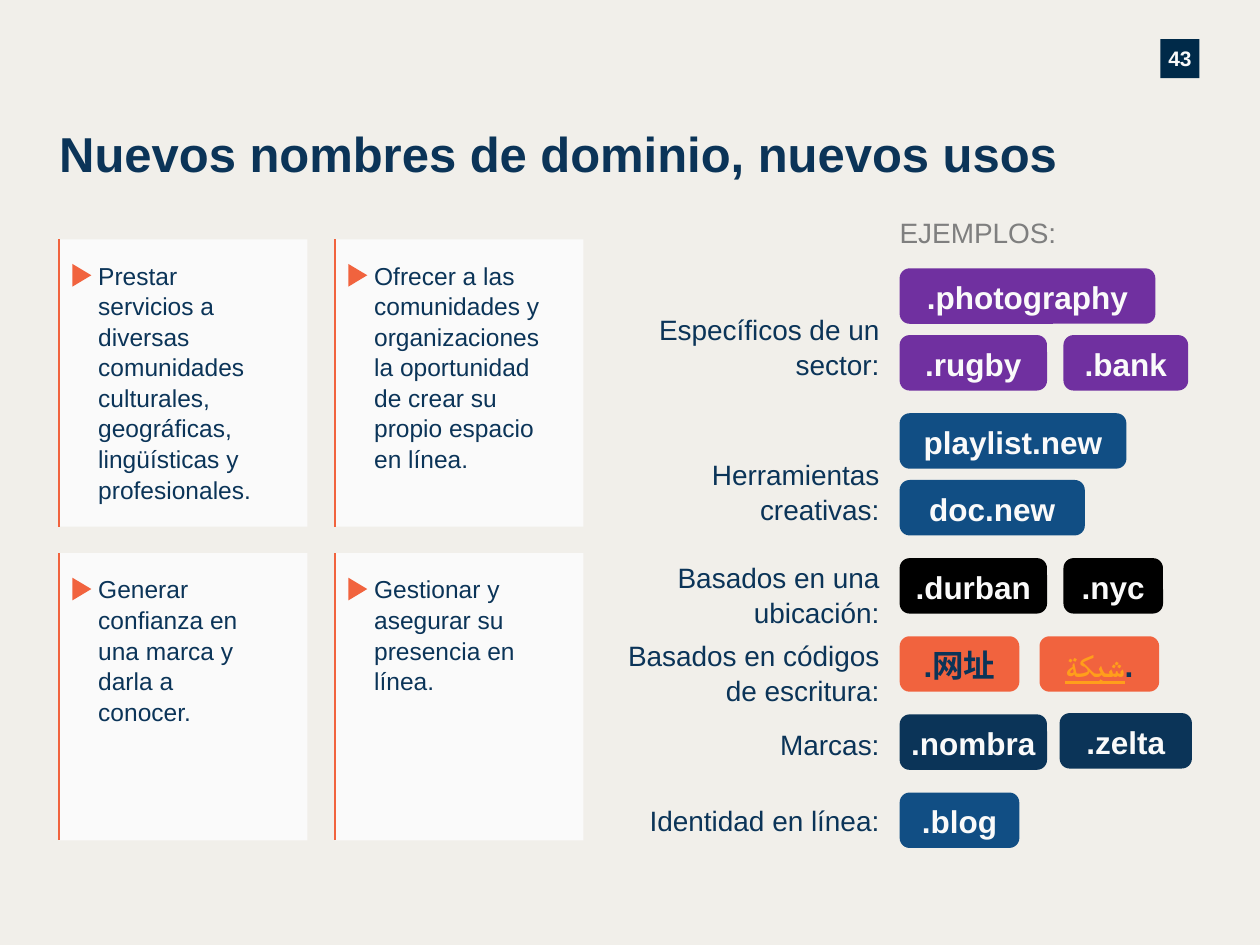
"""Build the slide on new domain names and their new uses."""
import pptx
import pptx.util
import pptx.dml.color
import pptx.enum.shapes
import pptx.enum.text
import pptx.oxml.ns
import lxml.etree

Inches = pptx.util.Inches
SHAPES = pptx.enum.shapes.MSO_SHAPE
ALIGN = pptx.enum.text.PP_ALIGN
ANCHOR = pptx.enum.text.MSO_ANCHOR
NAVY, BLUE, ORANGE, PALE = "0B3458", "114E84", "F1633E", "FAFAFA"
PURPLE, BLACK, AMBER = "7030A0", "000000", "FF9E1B"


def color(value):
    return pptx.dml.color.RGBColor.from_string(value)


def add_box(at, paragraphs, size, fill=None, kind=SHAPES.RECTANGLE, bold=False,
            align=ALIGN.LEFT, anchor=ANCHOR.TOP, insets=(0, 0, 0, 0), spacing=1.0):
    at = [Inches(length) for length in at]
    if fill:
        shape = slide.shapes.add_shape(kind, *at)
        shape.shadow.inherit = False
        shape.fill.solid()
        shape.fill.fore_color.rgb = color(fill)
        shape.line.fill.background()
    else:
        shape = slide.shapes.add_textbox(*at)
    if kind == SHAPES.ROUNDED_RECTANGLE:
        shape.adjustments[0] = 0.18
    frame = shape.text_frame
    frame.word_wrap = True
    frame.vertical_anchor = anchor
    frame.margin_left, frame.margin_top, frame.margin_right, frame.margin_bottom = [
        Inches(inset) for inset in insets]
    for index, runs in enumerate(paragraphs):
        paragraph = frame.add_paragraph() if index else frame.paragraphs[0]
        paragraph.alignment = align
        paragraph.line_spacing = spacing
        for text, text_color in runs:
            run = paragraph.add_run()
            run.text = text
            run.font.name = "Arial"
            run.font.size = pptx.util.Pt(size)
            run.font.bold = bold
            run.font.underline = text_color == AMBER
            run.font.color.rgb = color(text_color)
    return shape


presentation = pptx.Presentation()
presentation.slide_width = Inches(10)
presentation.slide_height = Inches(7.5)
slide = presentation.slides.add_slide(presentation.slide_layouts[6])
slide.background.fill.solid()
slide.background.fill.fore_color.rgb = color("F1EFEA")

add_box((9.21, 0.31, 0.31, 0.31), [[("43", PALE)]], 12, "002A49", bold=True,
        align=ALIGN.CENTER, anchor=ANCHOR.MIDDLE)
add_box((0.47, 0.98, 8.28, 0.56),
        [[("Nuevos nombres de dominio, nuevos usos", NAVY)]], 28, bold=True)

cards = [
    (0, 0, 0.24, ["Prestar servicios a diversas",
                  "comunidades culturales, geográficas,",
                  "lingüísticas y profesionales."]),
    (1, 0, 0.2, ["Ofrecer a las comunidades y organizaciones la oportunidad "
                 "de crear su propio espacio en línea."]),
    (0, 1, 0.39, ["Generar confianza en una marca y darla a conocer."]),
    (1, 1, 0.2, ["Gestionar y asegurar su presencia en línea."]),
]
for column, row, right_inset, lines in cards:
    left, top = 0.47 + 2.19 * column, 1.9 + 2.49 * row
    add_box((left, top, 1.97, 2.28), [[(line, NAVY)] for line in lines], 14, PALE,
            insets=(0.31, 0.16, right_inset, 0.2), spacing=1.04)
    marker = add_box((left + 0.09, top + 0.21, 0.18, 0.15), [], 14, ORANGE,
                     SHAPES.ISOSCELES_TRIANGLE)
    marker.rotation = 90
    edge = slide.shapes.add_connector(
        pptx.enum.shapes.MSO_CONNECTOR.STRAIGHT,
        Inches(left), Inches(top), Inches(left), Inches(top + 2.28))
    edge.line.color.rgb = color(ORANGE)
    edge.line.width = pptx.util.Pt(1.25)
    lxml.etree.SubElement(edge._element.spPr, pptx.oxml.ns.qn("a:effectLst"))

add_box((7.14, 1.71, 2.46, 0.27), [[("EJEMPLOS:", "7F7F7F")]], 16)

labels = [
    (2.47, 0.54, "Específicos de un sector:"),
    (3.62, 0.54, "Herramientas creativas:"),
    (4.44, 0.54, "Basados en una ubicación:"),
    (5.06, 0.54, "Basados en códigos de escritura:"),
    (5.76, 0.27, "Marcas:"),
    (6.37, 0.27, "Identidad en línea:"),
]
for top, height, label in labels:
    add_box((4.8, top, 2.18, height), [[(label, NAVY)]], 16, align=ALIGN.RIGHT,
            spacing=1.04)

tags = [
    (7.14, 2.13, 2.03, PURPLE, [(".photography", PALE)]),
    (7.14, 2.66, 1.17, PURPLE, [(".rugby", PALE)]),
    (8.44, 2.66, 0.99, PURPLE, [(".bank", PALE)]),
    (7.14, 3.28, 1.8, BLUE, [("playlist.new", PALE)]),
    (7.14, 3.81, 1.47, BLUE, [("doc.new", PALE)]),
    (7.14, 4.43, 1.17, BLACK, [(".durban", PALE)]),
    (8.44, 4.43, 0.79, BLACK, [(".nyc", PALE)]),
    (7.14, 5.05, 0.95, ORANGE, [(".网址", NAVY)]),
    (8.25, 5.05, 0.95, ORANGE, [("شبكة", AMBER), (".", NAVY)]),
    (7.14, 5.67, 1.17, NAVY, [(".nombra", PALE)]),
    (8.41, 5.66, 1.05, NAVY, [(".zelta", PALE)]),
    (7.14, 6.29, 0.95, BLUE, [(".blog", PALE)]),
]
for left, top, width, fill, runs in tags:
    add_box((left, top, width, 0.44), [runs], 18, fill, SHAPES.ROUNDED_RECTANGLE,
            bold=True, align=ALIGN.CENTER, anchor=ANCHOR.MIDDLE, spacing=1.06)

presentation.save("out.pptx")
